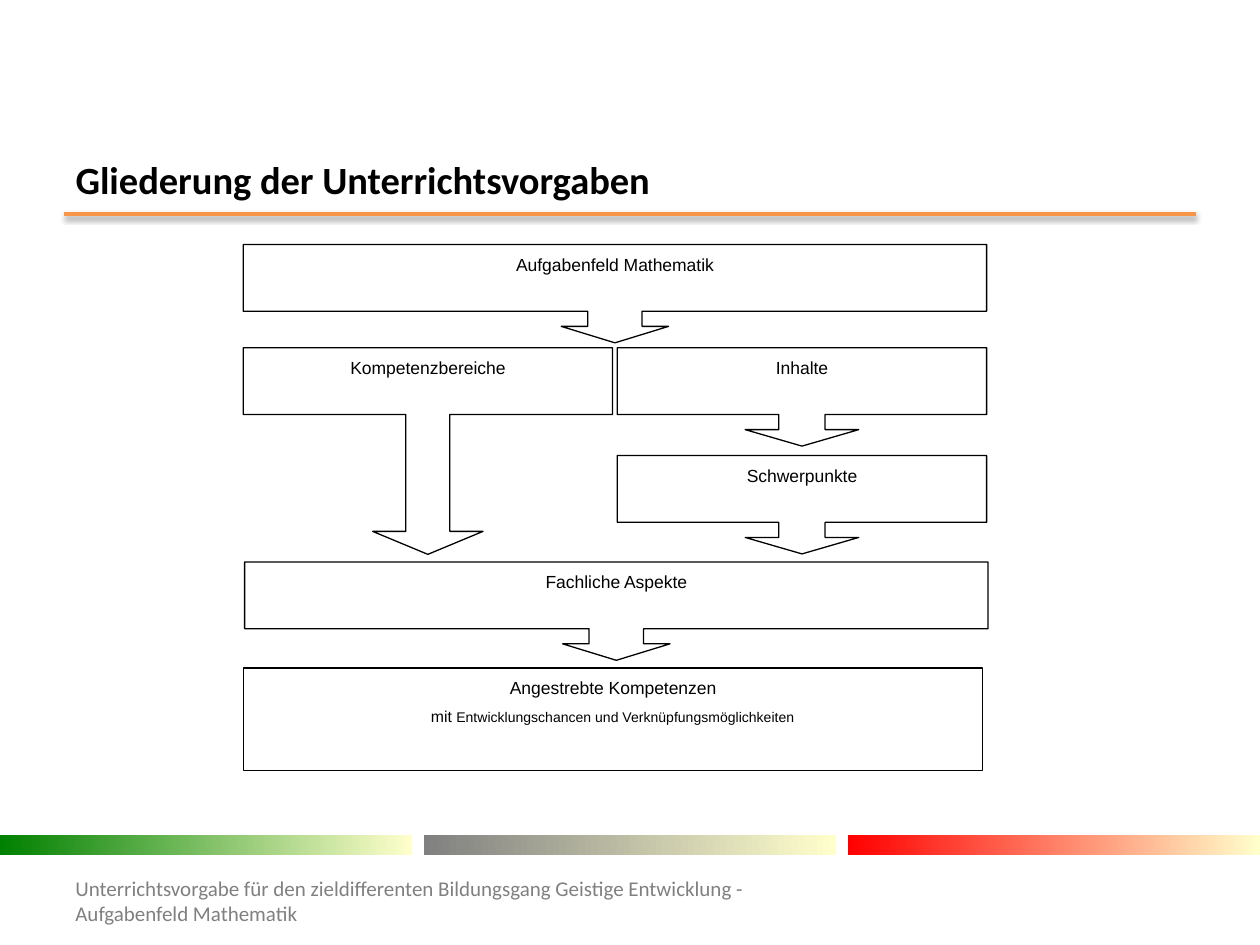
from lxml import etree
from pptx import Presentation
from pptx.dml.color import RGBColor
from pptx.enum import shapes, text
from pptx.oxml import parse_xml
from pptx.oxml.ns import nsdecls
from pptx.util import Pt

WIDE = (0.553, 0.546, 0.167, 0.679)
NARROW = (0.471, 0.577, 0.167, 0.679)
LONG = (0.213, 0.267, 0.111, 0.323)
CALLOUTS = [
    ("Aufgabenfeld Mathematik", (0, 0, 424.8, 56.2), WIDE),
    ("Kompetenzbereiche", (0, 59, 211, 118.1), LONG),
    ("Inhalte", (213.8, 59, 211, 56.2), NARROW),
    ("Schwerpunkte", (213.8, 120.6, 211, 56.2), NARROW),
    ("Fachliche Aspekte", (0.8, 181.4, 424.8, 56.2), WIDE),
]
GOAL_RUNS = [("mit ", 9), ("Entwicklungschancen und Verknüpfungsmöglichkeiten", 8)]
BAND_COLOURS = ["008000", "808080", "FF0000"]


def colour(code):
    """Turn a hex string into a colour."""
    return RGBColor.from_string(code)


def style(paragraph, font, size, code, bold=False):
    """Set the font of a whole paragraph."""
    paragraph.font.name = font
    paragraph.font.size = Pt(size)
    paragraph.font.bold = bold
    paragraph.font.color.rgb = colour(code)


def add_heading(slide, left, top, width, height):
    """Fill the title and draw the shadowed rule below it."""
    title = slide.shapes.title
    title.left, title.top, title.width, title.height = map(Pt, (left, top, width, height))
    frame = title.text_frame
    frame.text = "Gliederung der Unterrichtsvorgaben"
    frame.auto_size = text.MSO_AUTO_SIZE.NONE
    frame.vertical_anchor = text.MSO_ANCHOR.MIDDLE
    frame.paragraphs[0].alignment = text.PP_ALIGN.LEFT
    style(frame.paragraphs[0], "Calibri", 22, "000000", True)

    rule_top = Pt(top + height + 5.8)
    rule = slide.shapes.add_connector(
        shapes.MSO_CONNECTOR.STRAIGHT, Pt(left + 0.7), rule_top, Pt(left + width - 0.7), rule_top)
    rule.line.color.rgb = colour("F79646")
    rule.line.width = Pt(2)
    effects = parse_xml(f"<a:effectLst {nsdecls('a')}/>")
    shadow = etree.SubElement(
        effects, effects.tag.replace("effectLst", "outerShdw"),
        blurRad=str(Pt(3.1)), dist=str(Pt(1.6)), dir="5400000", rotWithShape="0")
    tint = etree.SubElement(shadow, effects.tag.replace("effectLst", "srgbClr"), val="000000")
    etree.SubElement(tint, effects.tag.replace("effectLst", "alpha"), val="38000")
    rule._element.spPr.append(effects)


def add_box(slide, kind, left, top, width, height, label, space_after):
    """Add an outlined box with a centred label at its top."""
    box = slide.shapes.add_shape(kind, *map(Pt, (left, top, width, height)))
    box.shadow.inherit = False
    box.fill.solid()
    box.fill.fore_color.rgb = colour("FFFFFF")
    box.line.color.rgb = colour("000000")
    box.line.width = Pt(0.75)
    box.text_frame.vertical_anchor = text.MSO_ANCHOR.TOP
    box.text_frame.text = label
    format_label(box.text_frame.paragraphs[0], space_after)
    return box


def format_label(paragraph, space_after):
    """Format one line of text in a box."""
    paragraph.alignment = text.PP_ALIGN.CENTER
    paragraph.line_spacing = 1.15
    paragraph.space_after = Pt(space_after)
    style(paragraph, "Arial", 10, "000000")


def add_structure(slide, left, top):
    """Draw the callouts leading down to the target competences."""
    for label, (x, y, width, height), adjustments in CALLOUTS:
        callout = add_box(slide, shapes.MSO_SHAPE.DOWN_ARROW_CALLOUT,
                          left + x, top + y, width, height, label, 10)
        for index, value in enumerate(adjustments):
            callout.adjustments[index] = value
    goal = add_box(slide, shapes.MSO_SHAPE.RECTANGLE, left, top + 242, 422.6, 58.8,
                   "Angestrebte Kompetenzen", 3)
    detail = goal.text_frame.add_paragraph()
    format_label(detail, 3)
    for words, size in GOAL_RUNS:
        run = detail.add_run()
        run.text = words
        run.font.size = Pt(size)


def add_bands(slide, left, top, width, height):
    """Spread the gradient bands evenly over the width."""
    band_width = 235.4
    step = (width - band_width) / (len(BAND_COLOURS) - 1)
    for index, code in enumerate(BAND_COLOURS):
        band = slide.shapes.add_shape(
            shapes.MSO_SHAPE.RECTANGLE, *map(Pt, (left + index * step, top, band_width, height)))
        band.shadow.inherit = False
        band.line.fill.background()
        band.fill.gradient()
        band.fill.gradient_angle = 0
        for stop, stop_code in zip(band.fill.gradient_stops, (code, "FFFFCC")):
            stop.color.rgb = colour(stop_code)


def add_footer(slide, left, top, width, height):
    """Add the source line at the bottom."""
    frame = slide.shapes.add_textbox(*map(Pt, (left, top, width, height))).text_frame
    frame.word_wrap = True
    frame.vertical_anchor = text.MSO_ANCHOR.MIDDLE
    frame.text = ("Unterrichtsvorgabe für den zieldifferenten Bildungsgang "
                  "Geistige Entwicklung - Aufgabenfeld Mathematik")
    style(frame.paragraphs[0], "Calibri", 12, "808080")


def main():
    """Build and save the slide."""
    deck = Presentation()
    deck.slide_width, deck.slide_height = Pt(720), Pt(540)
    slide = deck.slides.add_slide(deck.slide_layouts[5])
    add_heading(slide, 36, 88.6, 648, 28)
    add_bands(slide, 0, 477.2, 720, 11.5)
    add_footer(slide, 36, 500.4, 397.4, 28.8)
    add_structure(slide, 139, 139.7)
    deck.save("out.pptx")


if __name__ == "__main__":
    main()
